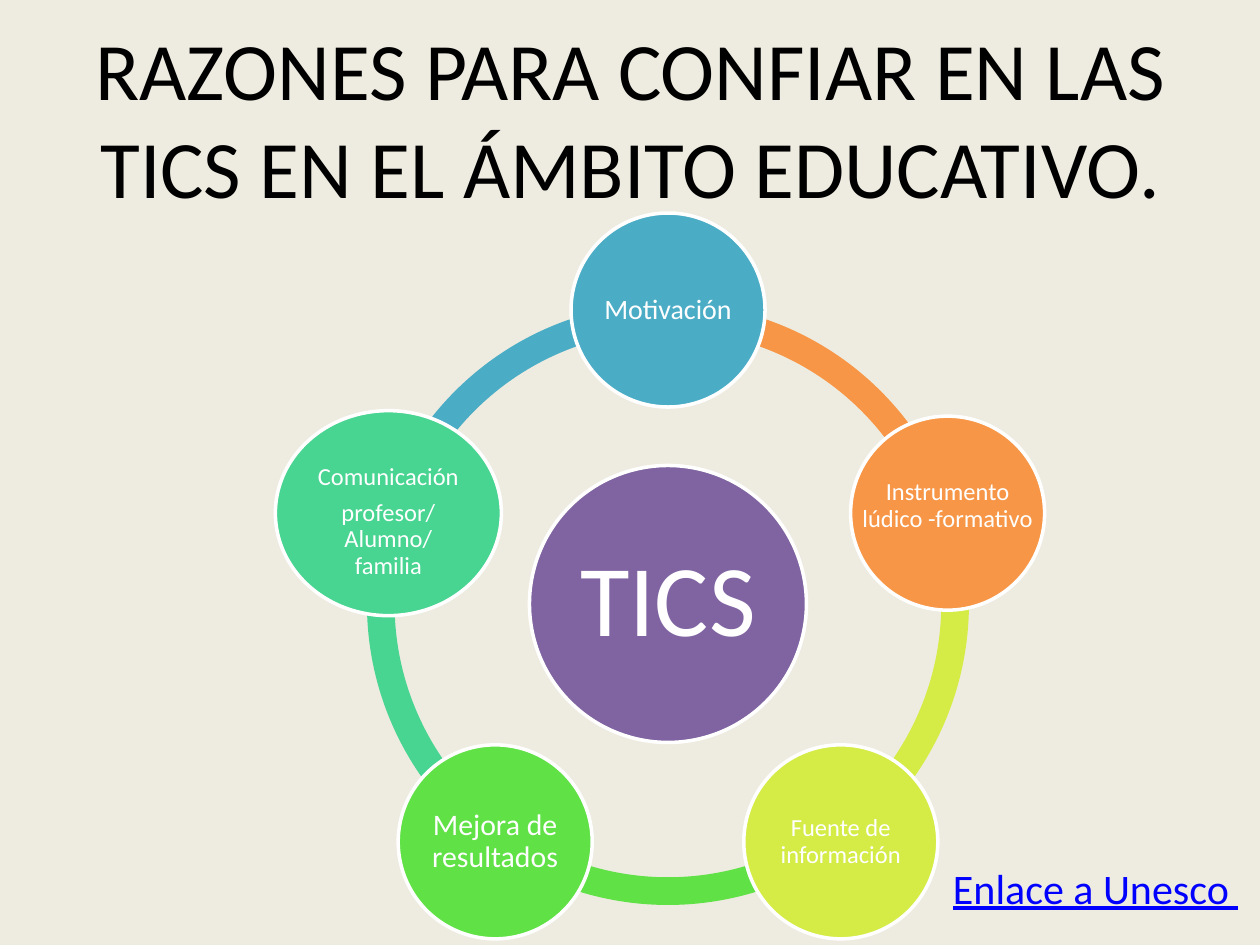
import math

from pptx import Presentation
from pptx.dml.color import RGBColor
from pptx.enum.shapes import MSO_SHAPE
from pptx.enum.text import MSO_ANCHOR, PP_ALIGN
from pptx.util import Pt

EMU_PER_PX = 914400 / 126
OVAL = MSO_SHAPE.OVAL
BLOCK_ARC = MSO_SHAPE.BLOCK_ARC
CENTER = PP_ALIGN.CENTER
LEFT = PP_ALIGN.LEFT
MIDDLE = MSO_ANCHOR.MIDDLE
TOP = MSO_ANCHOR.TOP

BACKGROUND = RGBColor(0xEE, 0xEC, 0xE1)
BLACK = RGBColor(0, 0, 0)
WHITE = RGBColor(0xFF, 0xFF, 0xFF)
LINK_BLUE = RGBColor(0, 0, 0xFF)
PURPLE = RGBColor(0x80, 0x64, 0xA2)
TEAL = RGBColor(0x4B, 0xAC, 0xC6)
ORANGE = RGBColor(0xF7, 0x96, 0x46)
LIME = RGBColor(0xD5, 0xEC, 0x46)
GREEN = RGBColor(0x60, 0xE1, 0x46)
MINT = RGBColor(0x48, 0xD4, 0x91)

FONT = "Calibri"
CENTER_X, CENTER_Y = 668, 604
RING_RADIUS = 301
ORBIT_RADIUS = 294
RING_THICKNESS = 0.046
ARC_UNITS_PER_DEGREE = 0.6
NODE = 194

REASONS = [
    ("Motivación", 16, TEAL, NODE, NODE, 0, 0),
    ("Instrumento\vlúdico -formativo", 14, ORANGE, NODE, NODE, 0, 14),
    ("Fuente de\vinformación", 14, LIME, NODE, NODE, 0, 0),
    ("Mejora de\vresultados", 17, GREEN, NODE, NODE, 0, 0),
    ("Comunicación\nprofesor/\vAlumno/\vfamilia", 14, MINT, 226, 205, 18, 0),
]


def px(length):
    """Convert pixels to EMU."""
    return round(length * EMU_PER_PX)


def write_text(shape, text, size, color, alignment, anchor, insets):
    """Fill a shape with text; insets run left, top, right, bottom."""
    frame = shape.text_frame
    frame.text = text
    frame.vertical_anchor = anchor
    (frame.margin_left, frame.margin_top,
     frame.margin_right, frame.margin_bottom) = map(px, insets)
    for paragraph in frame.paragraphs:
        paragraph.alignment = alignment
        paragraph.font.name = FONT
        paragraph.font.size = Pt(size)
        paragraph.font.color.rgb = color
    return frame


def add_text_box(slide, box, text, size, color, alignment, anchor, insets):
    """Add a wrapping text box."""
    shape = slide.shapes.add_textbox(*map(px, box))
    frame = write_text(shape, text, size, color, alignment, anchor, insets)
    frame.word_wrap = True
    return frame


def add_centered_shape(slide, kind, x, y, width, height, fill):
    """Add a filled preset shape around a centre point."""
    shape = slide.shapes.add_shape(
        kind, px(x - width / 2), px(y - height / 2), px(width), px(height))
    shape.shadow.inherit = False
    shape.fill.solid()
    shape.fill.fore_color.rgb = fill
    return shape


def add_arc(slide, start, end, fill):
    """Add one ring segment between two angles in degrees."""
    diameter = 2 * RING_RADIUS
    arc = add_centered_shape(
        slide, BLOCK_ARC, CENTER_X, CENTER_Y, diameter, diameter, fill)
    arc.line.fill.background()
    arc.adjustments[0] = start % 360 * ARC_UNITS_PER_DEGREE
    arc.adjustments[1] = end % 360 * ARC_UNITS_PER_DEGREE
    arc.adjustments[2] = RING_THICKNESS


def add_circle(slide, x, y, width, height, fill, text, size, top=0, bottom=0):
    """Add a white-rimmed circle with centred text."""
    circle = add_centered_shape(slide, OVAL, x, y, width, height, fill)
    circle.line.color.rgb = WHITE
    circle.line.width = Pt(2)
    frame = write_text(circle, text, size, WHITE, CENTER, MIDDLE,
                       (0, top, 0, bottom))
    frame.word_wrap = False
    for paragraph in frame.paragraphs:
        paragraph.line_spacing = 0.9
    for paragraph in frame.paragraphs[:-1]:
        paragraph.space_after = Pt(5)


def add_wheel(slide):
    """Draw the ring, the hub and the reasons around it."""
    step = 360 / len(REASONS)
    angles = [270 + index * step for index in range(len(REASONS))]
    fills = [reason[2] for reason in REASONS]
    for angle, fill in zip(angles, fills[1:] + fills[:1]):
        add_arc(slide, angle, angle + step, fill)
    add_circle(slide, CENTER_X, CENTER_Y, 277, 277, PURPLE, "TICS", 58)
    for angle, reason in zip(angles, REASONS):
        text, size, fill, width, height, top, bottom = reason
        x = CENTER_X + ORBIT_RADIUS * math.cos(math.radians(angle))
        y = CENTER_Y + ORBIT_RADIUS * math.sin(math.radians(angle))
        add_circle(slide, x, y, width, height, fill, text, size, top, bottom)


def main():
    """Build and save the slide."""
    presentation = Presentation()
    presentation.slide_width, presentation.slide_height = px(1260), px(945)
    slide = presentation.slides.add_slide(presentation.slide_layouts[6])
    slide.background.fill.solid()
    slide.background.fill.fore_color.rgb = BACKGROUND
    add_text_box(slide, (63, 38, 1134, 158),
                 "RAZONES PARA CONFIAR EN LAS TICS EN EL ÁMBITO EDUCATIVO.",
                 46.6, BLACK, CENTER, MIDDLE, (12, 6, 12, 6))
    add_wheel(slide)
    link = add_text_box(slide, (944, 857, 306, 59), "Enlace a Unesco ",
                        24, LINK_BLUE, LEFT, TOP, (9, 5, 9, 5))
    link.paragraphs[0].font.underline = True
    presentation.save("out.pptx")


if __name__ == "__main__":
    main()
